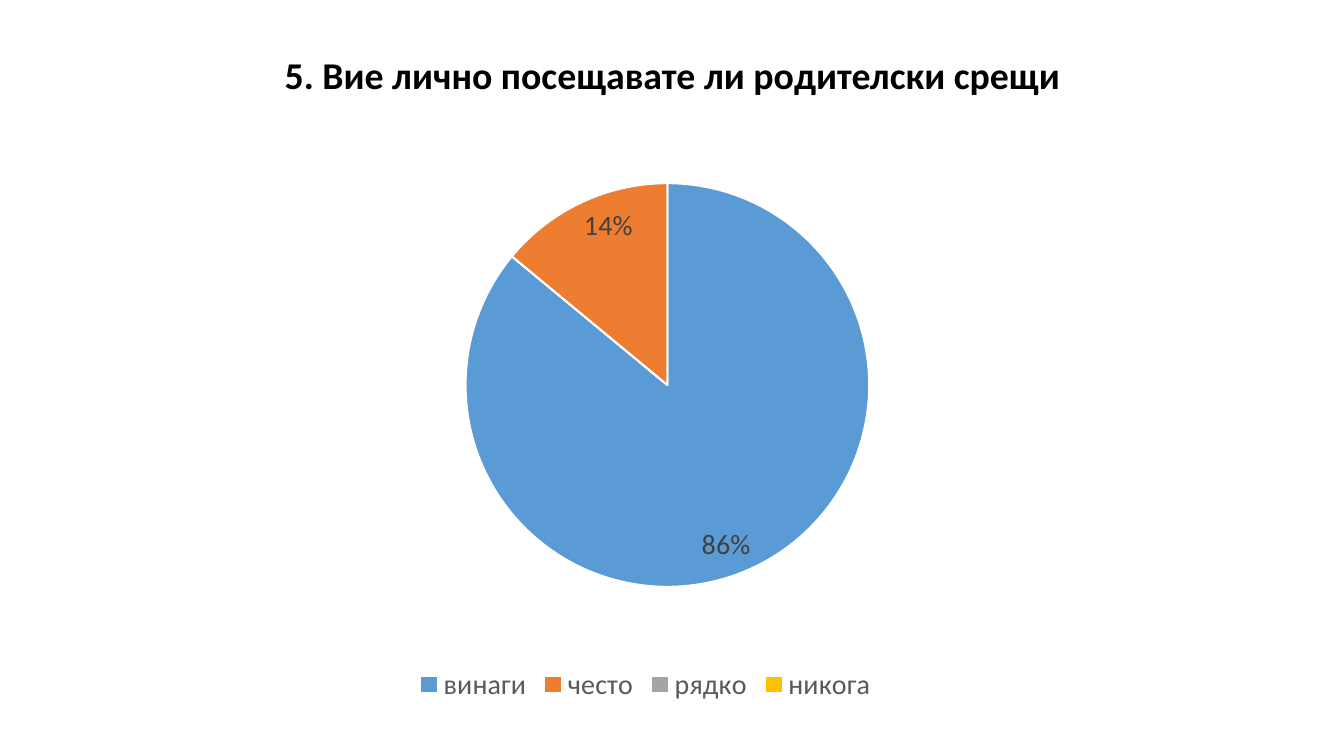
import pptx
import pptx.util
import pptx.dml.color
import pptx.chart.data
import pptx.enum.chart
import pptx.enum.text
import pptx.oxml
import pptx.oxml.ns
from dataclasses import dataclass

HEAD = "5. Вие лично посещавате ли родителски срещи"
SHARES = {"винаги": 0.86, "често": 0.14, "рядко": 0, "никога": 0}
SIZE = (33.87, 19.05)
TITLE = (2.34, 1.02, 29.21, 3.68)
CHART = (0.99, 3.56, 30.56, 14.27)
PLOT = {"x": 0.093, "y": 0.074, "w": 0.85, "h": 0.713}


@dataclass(frozen=True)
class Theme:
    font: str = "Calibri"
    head: int = 27
    body: int = 20
    base: int = 10
    black: str = "000000"
    white: str = "FFFFFF"
    label: str = "404040"
    key: str = "595959"
    fills: tuple = ("5B9BD5", "ED7D31", "A5A5A5", "FFC000")


theme = Theme()
Cm = pptx.util.Cm
Pt = pptx.util.Pt


def rgb(code):
    return pptx.dml.color.RGBColor.from_string(code)


def style(font, size, color, bold=False):
    font.name = theme.font
    font.size = Pt(size)
    font.bold = bold
    font.color.rgb = rgb(color)


def add_head(slide):
    title = slide.shapes.title
    title.left, title.top, title.width, title.height = map(Cm, TITLE)
    frame = title.text_frame
    frame.word_wrap = True
    frame.vertical_anchor = pptx.enum.text.MSO_ANCHOR.MIDDLE
    frame.margin_bottom = Cm(1.96)
    para = frame.paragraphs[0]
    para.alignment = pptx.enum.text.PP_ALIGN.CENTER
    para.line_spacing = 0.9
    run = para.add_run()
    run.text = HEAD
    style(run.font, theme.head, theme.black, True)


def set_plot(chart):
    area = chart._chartSpace.chart.plotArea
    for old in area.findall(pptx.oxml.ns.qn("c:layout")):
        area.remove(old)
    modes = '<c:xMode val="edge"/><c:yMode val="edge"/>'
    parts = "".join(f'<c:{k} val="{v}"/>' for k, v in PLOT.items())
    area.insert(0, pptx.oxml.parse_xml(
        f'<c:layout {pptx.oxml.ns.nsdecls("c")}><c:manualLayout>'
        f'<c:layoutTarget val="inner"/>{modes}{parts}'
        '</c:manualLayout></c:layout>'))


def add_pie(slide):
    data = pptx.chart.data.CategoryChartData(number_format="0%")
    data.categories = list(SHARES)
    data.add_series("Series 1", list(SHARES.values()))
    kind = pptx.enum.chart.XL_CHART_TYPE.PIE
    chart = slide.shapes.add_chart(kind, *map(Cm, CHART), data).chart
    style(chart.font, theme.base, theme.black)
    chart.has_title = False
    chart.has_legend = True
    key = chart.legend
    key.position = pptx.enum.chart.XL_LEGEND_POSITION.BOTTOM
    key.include_in_layout = False
    style(key.font, theme.body, theme.key)
    plot = chart.plots[0]
    plot.vary_by_categories = True
    pie = plot.series[0]
    for spot, color in enumerate(theme.fills):
        form = pie.points[spot].format
        form.fill.solid()
        form.fill.fore_color.rgb = rgb(color)
        form.line.color.rgb = rgb(theme.white)
        form.line.width = Pt(1.5)
    tags = pie.data_labels
    tags.show_value = True
    tags.show_percentage = False
    tags.number_format = "0%;;;"
    tags.number_format_is_linked = False
    tags.position = pptx.enum.chart.XL_LABEL_POSITION.INSIDE_END
    style(tags.font, theme.body, theme.label)
    set_plot(chart)


def main():
    deck = pptx.Presentation()
    deck.slide_width, deck.slide_height = map(Cm, SIZE)
    slide = deck.slides.add_slide(deck.slide_layouts[5])
    add_head(slide)
    add_pie(slide)
    deck.save("out.pptx")


if __name__ == "__main__":
    main()
